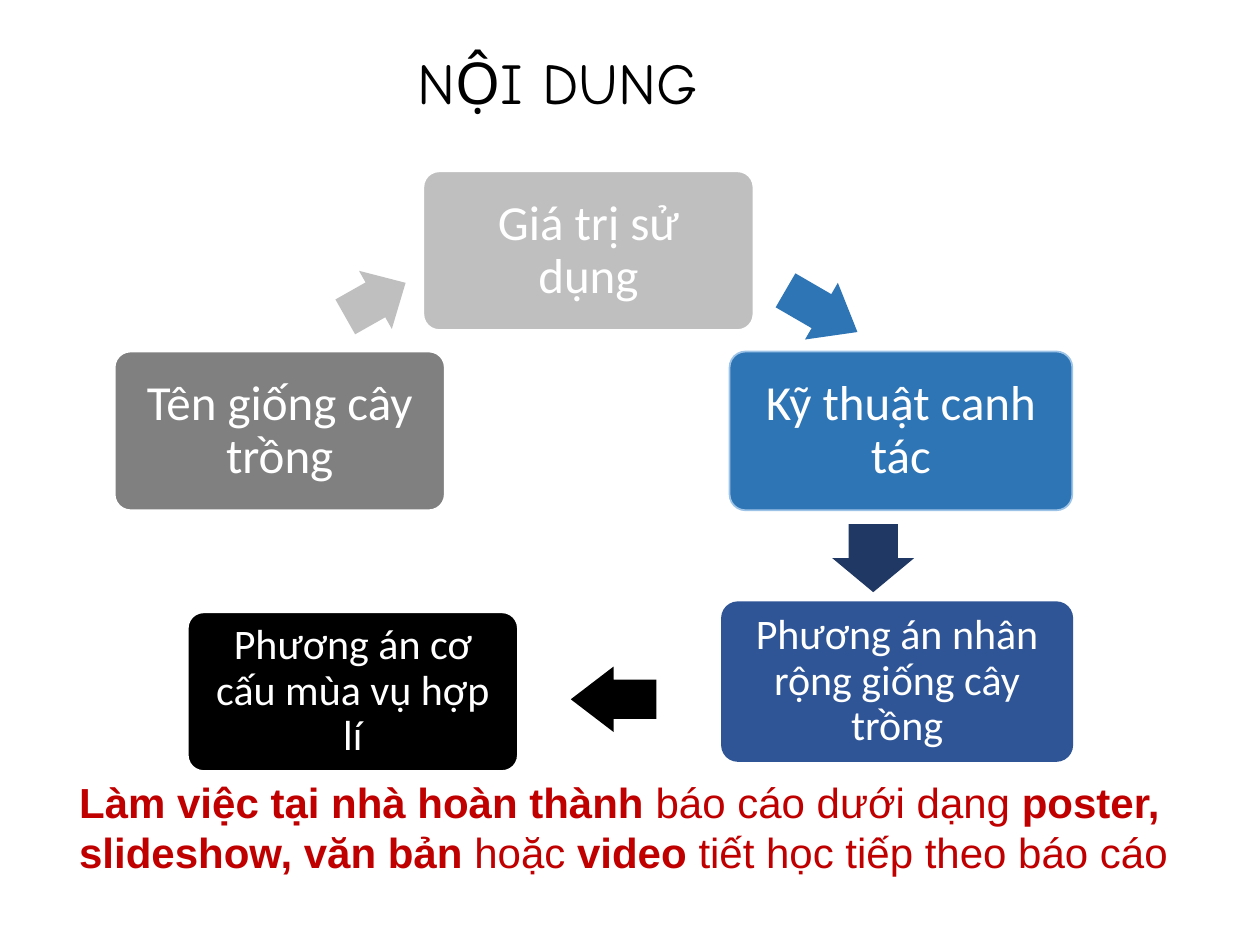
from dataclasses import dataclass

from pptx import Presentation
from pptx.dml.color import RGBColor
from pptx.enum.shapes import MSO_SHAPE
from pptx.enum.text import MSO_ANCHOR, PP_ALIGN
from pptx.util import Inches, Pt

CARD, ARROW = MSO_SHAPE.ROUNDED_RECTANGLE, MSO_SHAPE.RIGHT_ARROW
MIDDLE, TOP = MSO_ANCHOR.MIDDLE, MSO_ANCHOR.TOP
CENTER, LEFT = PP_ALIGN.CENTER, PP_ALIGN.LEFT


@dataclass(frozen=True)
class Theme:
    black: str = "000000"
    white: str = "FFFFFF"
    gray: str = "808080"
    silver: str = "BFBFBF"
    blue: str = "2E75B6"
    pale_blue: str = "9DC3E6"
    royal: str = "2F5597"
    navy: str = "203864"
    red: str = "C00000"
    title_font: str = "Comic Neue"
    card_font: str = "Calibri"
    note_font: str = "Arial"
    title_size: int = 33
    large: int = 28
    small: int = 24


THEME = Theme()

# Steps in cycle order: text, box, size, fill, outline
STEPS = [
    ("Tên giống cây trồng", (0.91, 2.79, 2.62, 1.26), THEME.large, THEME.gray, THEME.white),
    ("Giá trị sử dụng", (3.36, 1.36, 2.62, 1.26), THEME.large, THEME.silver, THEME.white),
    ("Kỹ thuật canh tác", (5.79, 2.79, 2.72, 1.26), THEME.large, THEME.blue, THEME.pale_blue),
    ("Phương án nhân rộng giống cây trồng", (5.73, 4.78, 2.78, 1.26),
     THEME.small, THEME.royal, THEME.royal),
    ("Phương án cơ cấu mùa vụ hợp lí", (1.49, 4.86, 2.62, 1.26),
     THEME.small, THEME.black, THEME.white),
]

# Arrows between steps: centre x, centre y, length, breadth, angle, fill
ARROWS = [
    (2.98, 2.38, 0.55, 0.53, 330.5, THEME.silver),
    (6.52, 2.47, 0.66, 0.52, 30.1, THEME.blue),
    (6.93, 4.43, 0.54, 0.65, 90, THEME.navy),
    (4.87, 5.55, 0.68, 0.52, 180, THEME.black),
]

NOTE = [
    ("Làm việc tại nhà hoàn thành ", True),
    ("báo cáo dưới dạng ", False),
    ("poster, slideshow, văn bản ", True),
    ("hoặc ", False),
    ("video ", True),
    ("tiết học tiếp theo báo cáo", False),
]


def color(value):
    return RGBColor.from_string(value)


def write(shape, spans, font, size, ink, align=CENTER, anchor=MIDDLE, spacing=0.9, inset=None):
    frame = shape.text_frame
    settings = {"word_wrap": True, "vertical_anchor": anchor}
    if inset is not None:
        for side in ("left", "top", "right", "bottom"):
            settings[f"margin_{side}"] = Inches(inset)
    for name, value in settings.items():
        setattr(frame, name, value)
    para = frame.paragraphs[0]
    para.alignment, para.line_spacing = align, spacing
    for text, bold in spans:
        span = para.add_run()
        span.text = text
        for name, value in {"name": font, "size": Pt(size), "bold": bold}.items():
            setattr(span.font, name, value)
        span.font.color.rgb = color(ink)


def add_filled(page, kind, box, fill, outline=None):
    shape = page.shapes.add_shape(kind, *map(Inches, box))
    shape.shadow.inherit = False
    shape.fill.solid()
    shape.fill.fore_color.rgb = color(fill)
    if outline:
        shape.line.color.rgb = color(outline)
        shape.line.width = Pt(1)
    else:
        shape.line.fill.background()
    return shape


def add_title(page, box):
    title = page.shapes.add_textbox(*map(Inches, box))
    write(title, [("NỘI DUNG", False)], THEME.title_font, THEME.title_size, THEME.black)


def add_step(page, box, text, size, fill, outline):
    card = add_filled(page, CARD, box, fill, outline)
    card.adjustments[0] = 0.1
    write(card, [(text, False)], THEME.card_font, size, THEME.white, inset=0.13)


def add_arrow(page, x, y, length, breadth, angle, fill):
    box = (x - length / 2, y - breadth / 2, length, breadth)
    arrow = add_filled(page, ARROW, box, fill)
    arrow.adjustments[0] = 0.6
    # The head takes half of the arrow's length
    arrow.adjustments[1] = length / 2 / min(length, breadth)
    arrow.rotation = angle


def add_note(page, box):
    note = page.shapes.add_textbox(*map(Inches, box))
    write(note, NOTE, THEME.note_font, THEME.small, THEME.red,
          align=LEFT, anchor=TOP, spacing=1.0)


def main():
    deck = Presentation()
    deck.slide_width, deck.slide_height = Inches(10), Inches(7.5)
    page = deck.slides.add_slide(deck.slide_layouts[6])

    add_title(page, (0.5, 0.26, 7.85, 0.84))
    # Cycle of steps
    for text, box, size, fill, outline in STEPS:
        add_step(page, box, text, size, fill, outline)
    for arrow in ARROWS:
        add_arrow(page, *arrow)
    # Homework note
    add_note(page, (0.53, 6.11, 9.61, 0.91))

    deck.save("out.pptx")


if __name__ == "__main__":
    main()
